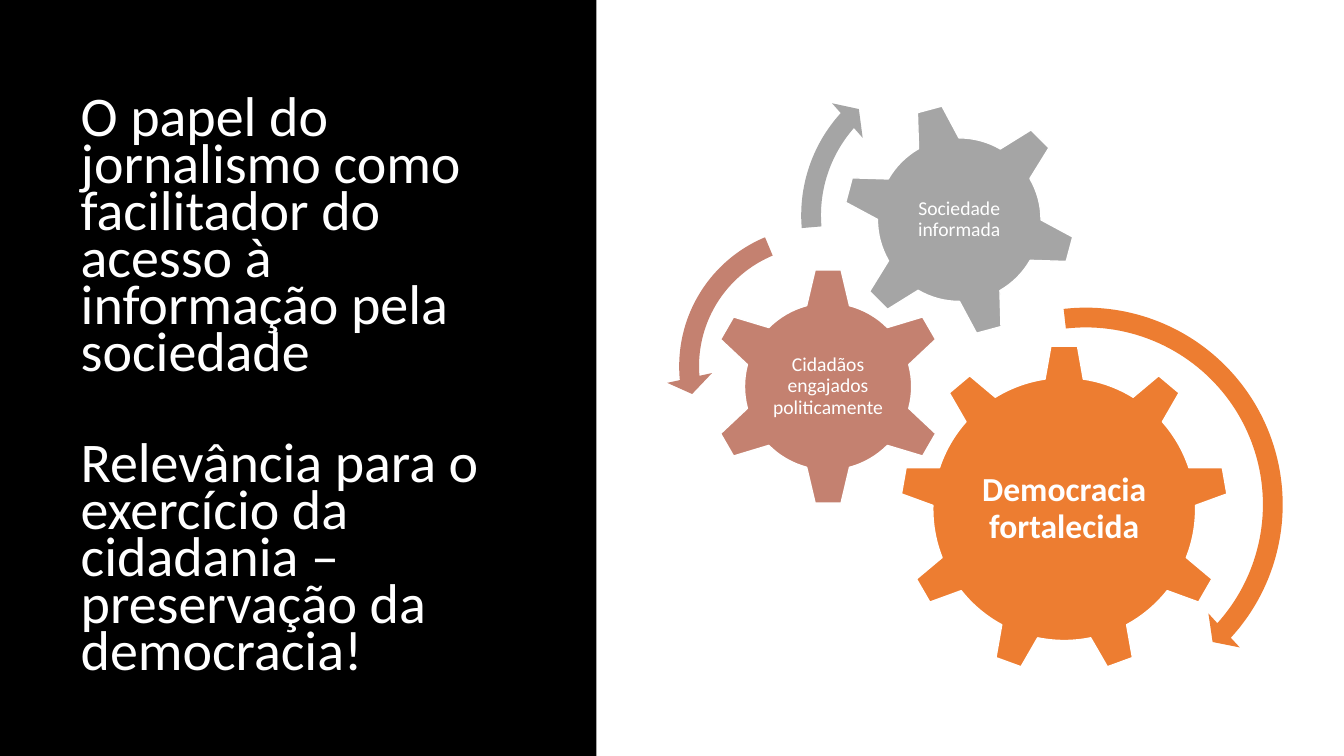
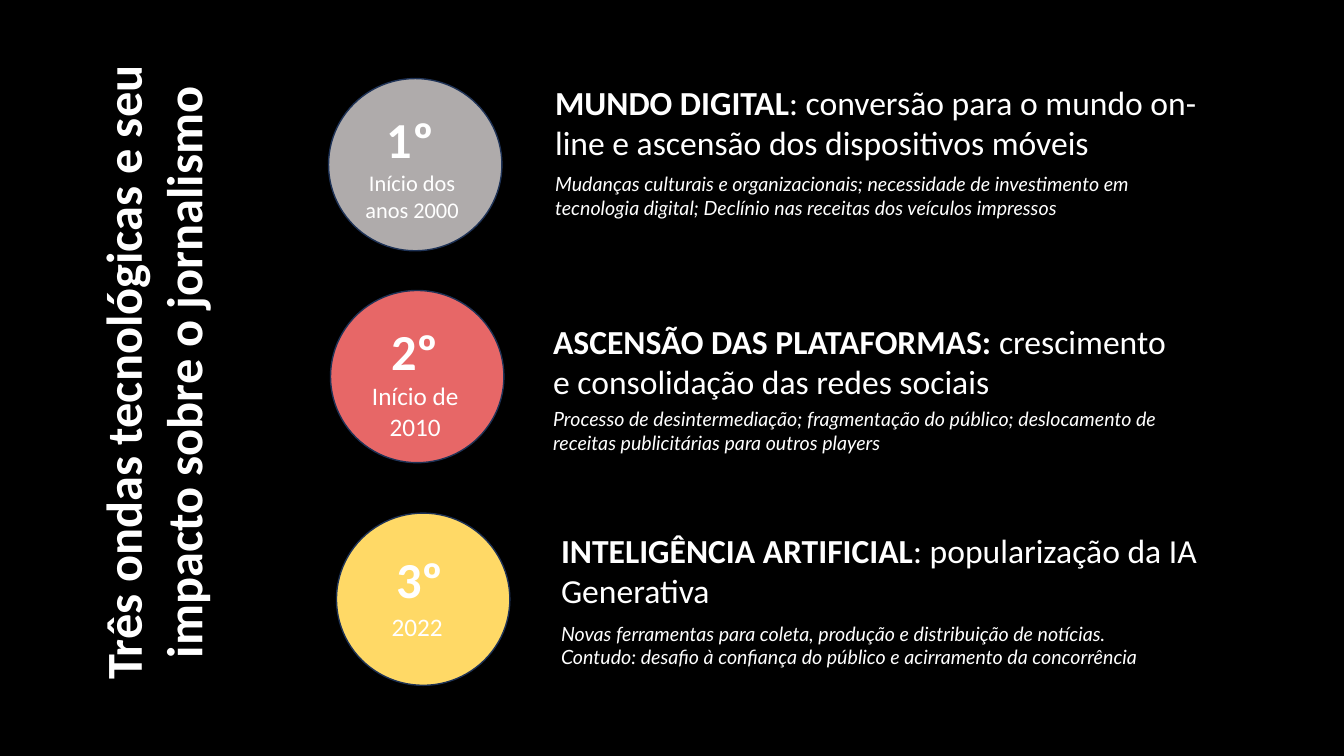
"""Build two slides on journalism, democracy and the waves of technology."""
from dataclasses import dataclass

from pptx import Presentation
from pptx.dml.color import RGBColor
from pptx.enum.shapes import MSO_SHAPE
from pptx.enum.text import MSO_ANCHOR, MSO_AUTO_SIZE, PP_ALIGN
from pptx.util import Cm, Pt

RECTANGLE, ELLIPSE = MSO_SHAPE.RECTANGLE, MSO_SHAPE.OVAL
GEAR_6, GEAR_9 = MSO_SHAPE.GEAR_6, MSO_SHAPE.GEAR_9
ARROW, LEFT_ARROW = MSO_SHAPE.CIRCULAR_ARROW, MSO_SHAPE.LEFT_CIRCULAR_ARROW
TOP, MIDDLE = MSO_ANCHOR.TOP, MSO_ANCHOR.MIDDLE
LEFT, CENTER = PP_ALIGN.LEFT, PP_ALIGN.CENTER
NO_AUTOFIT = MSO_AUTO_SIZE.NONE
TITLE_ONLY = 5


@dataclass(frozen=True)
class Theme:
    """Colours, fonts and type sizes in points."""
    black: str = "000000"
    white: str = "FFFFFF"
    orange: str = "ED7D31"
    clay: str = "C48170"
    grey: str = "A5A5A5"
    silver: str = "AFABAB"
    coral: str = "E76767"
    yellow: str = "FFD966"
    navy: str = "1E3256"
    font: str = "Calibri"
    detail_font: str = "Lato"
    statement: int = 40
    display: int = 36
    heading: int = 24
    period: int = 18
    small_period: int = 16
    small: int = 14


THEME = Theme()


@dataclass(frozen=True)
class Area:
    """A rectangle in centimetres."""
    left: float
    top: float
    width: float
    height: float

    def lengths(self) -> tuple:
        """Return the four lengths for python-pptx."""
        return Cm(self.left), Cm(self.top), Cm(self.width), Cm(self.height)

    def centred(self, side: float) -> "Area":
        """Return a square with the same centre."""
        return Area(self.left + (self.width - side) / 2,
                    self.top + (self.height - side) / 2, side, side)


@dataclass(frozen=True)
class Style:
    """How a paragraph is set."""
    size: int
    align: PP_ALIGN = LEFT
    bold: bool = False
    italic: bool = False
    font: str = THEME.font


@dataclass(frozen=True)
class Gear:
    """A labelled gear."""
    label: str
    kind: MSO_SHAPE
    left: float
    top: float
    side: float
    label_side: float
    colour: str
    style: Style
    rotation: float = 0


@dataclass(frozen=True)
class Turn:
    """A circular arrow: thicknesses in percent, angles in degrees."""
    kind: MSO_SHAPE
    left: float
    top: float
    side: float
    colour: str
    band: float
    head_angle: float
    end_angle: float
    start_angle: float
    head: float


@dataclass(frozen=True)
class Wave:
    """One technological wave and the places of its parts."""
    number: str
    number_at: tuple[float, float]
    period: str
    period_at: tuple[float, float]
    period_size: int
    circle_at: tuple[float, float]
    colour: str
    name: str
    summary: str
    text_left: float
    heading_top: float
    heading_width: float
    detail: str
    detail_top: float


STATEMENT = Style(THEME.statement)
SIDE_TITLE = Style(THEME.display, CENTER, bold=True)
NUMBER = Style(THEME.display, CENTER, bold=True)
HEADING = Style(THEME.heading)
DETAIL = Style(THEME.small, italic=True, font=THEME.detail_font)
SMALL_LABEL = Style(THEME.small, CENTER)
MAIN_LABEL = Style(THEME.heading, CENTER, bold=True)

STATEMENTS = [
    "O papel do jornalismo como facilitador do acesso à informação pela sociedade",
    "Relevância para o exercício da cidadania – preservação da democracia!",
]
GEARS = [
    Gear("Democracia fortalecida", GEAR_9, 22.68, 8.69, 8.28, 4.95, THEME.orange, MAIN_LABEL),
    Gear("Cidadãos engajados politicamente", GEAR_6, 17.86, 6.73, 6.02, 3, THEME.clay, SMALL_LABEL),
    Gear("Sociedade informada", GEAR_6, 21.23, 2.59, 5.89, 3.3, THEME.grey, SMALL_LABEL, 345),
]
TURNS = [
    Turn(ARROW, 22.07, 7.42, 10.59, THEME.orange, 4.7, 4.98, 42.32, 263.54, 5.5),
    Turn(LEFT_ARROW, 16.79, 5.38, 7.7, THEME.clay, 6.5, 7.17, 174.82, 247.3, 7.5),
    Turn(ARROW, 19.86, 1.27, 8.31, THEME.grey, 6, 6.57, 221.9, 175.14, 7),
]
WAVES = [
    Wave("1º", (9.02, 2.59), "Início dos anos 2000", (8.81, 4.14), THEME.small_period,
         (8.28, 1.98), THEME.silver, "MUNDO DIGITAL",
         ": conversão para o mundo on-line e ascensão dos dispositivos móveis",
         13.74, 1.93, 17.02,
         "Mudanças culturais e organizacionais; necessidade de investimento em tecnologia "
         "digital; Declínio nas receitas dos veículos impressos", 4.22),
    Wave("2º", (9.14, 7.95), "Início de 2010", (8.89, 9.47), THEME.period,
         (8.33, 7.32), THEME.coral, "ASCENSÃO DAS PLATAFORMAS: ",
         "crescimento e consolidação das redes sociais",
         13.69, 7.95, 16.28,
         "Processo de desintermediação; fragmentação do público; deslocamento de receitas "
         "publicitárias para outros players", 10.13),
    Wave("3º", (9.27, 13.69), "2022", (8.94, 15.29), THEME.period,
         (8.48, 12.93), THEME.yellow, "INTELIGÊNCIA ARTIFICIAL",
         ": popularização da IA Generativa",
         13.89, 13.23, 17.02,
         "Novas ferramentas para coleta, produção e distribuição de notícias. Contudo: desafio "
         "à confiança do público e acirramento da concorrência", 15.54),
]


def rgb(colour: str) -> RGBColor:
    """Turn a hex string into a colour."""
    return RGBColor.from_string(colour)


def format_paragraph(para, style: Style) -> None:
    """Apply a style to a paragraph."""
    para.alignment = style.align
    font = para.font
    font.name, font.size = style.font, Pt(style.size)
    font.bold, font.italic = style.bold, style.italic
    font.color.rgb = rgb(THEME.white)


def add_shape(page, kind: MSO_SHAPE, area: Area, colour: str, line: str | None = None):
    """Add a flat filled shape, with a one-point outline if a colour is given."""
    shape = page.shapes.add_shape(kind, *area.lengths())
    shape.shadow.inherit = False
    shape.fill.solid()
    shape.fill.fore_color.rgb = rgb(colour)
    if line:
        shape.line.color.rgb = rgb(line)
        shape.line.width = Pt(1)
    else:
        shape.line.fill.background()
    return shape


def add_text(page, area: Area, text: str, style: Style):
    """Add a wrapping text box with one paragraph."""
    box = page.shapes.add_textbox(*area.lengths())
    box.text_frame.word_wrap = True
    para = box.text_frame.paragraphs[0]
    para.text = text
    format_paragraph(para, style)
    return box


def add_page(deck, title_area: Area, paragraphs: list[str], style: Style):
    """Add a slide and fill its title placeholder."""
    page = deck.slides.add_slide(deck.slide_layouts[TITLE_ONLY])
    title = page.shapes.title
    title.left, title.top, title.width, title.height = title_area.lengths()
    frame = title.text_frame
    frame.text = "\n".join(paragraphs)
    frame.word_wrap, frame.auto_size, frame.vertical_anchor = True, NO_AUTOFIT, TOP
    for para in frame.paragraphs:
        format_paragraph(para, style)
    return page


def draw_gear(page, gear: Gear) -> None:
    """Draw a gear and its centred label."""
    area = Area(gear.left, gear.top, gear.side, gear.side)
    add_shape(page, gear.kind, area, gear.colour, THEME.white).rotation = gear.rotation
    frame = add_text(page, area.centred(gear.label_side), gear.label, gear.style).text_frame
    frame.vertical_anchor = MIDDLE
    frame.margin_left = frame.margin_right = frame.margin_top = frame.margin_bottom = Cm(0.05)
    frame.paragraphs[0].line_spacing = 0.9


def draw_turn(page, turn: Turn) -> None:
    """Draw a circular arrow."""
    shape = add_shape(page, turn.kind, Area(turn.left, turn.top, turn.side, turn.side), turn.colour)
    angles = [angle * 0.6 for angle in (turn.head_angle, turn.end_angle, turn.start_angle)]
    for index, value in enumerate([turn.band / 100, *angles, turn.head / 100]):
        shape.adjustments[index] = value


def draw_wave(page, wave: Wave) -> None:
    """Draw a wave's circle, heading and detail."""
    add_shape(page, ELLIPSE, Area(*wave.circle_at, 4.37, 4.34), wave.colour, THEME.navy)
    add_text(page, Area(*wave.number_at, 2.64, 1.8), wave.number, NUMBER)
    add_text(page, Area(*wave.period_at, 3.15, 1.8), wave.period, Style(wave.period_size, CENTER))
    heading_area = Area(wave.text_left, wave.heading_top, wave.heading_width, 2.31)
    para = add_text(page, heading_area, wave.name, HEADING).text_frame.paragraphs[0]
    para.runs[0].font.bold = True
    para.add_run().text = wave.summary
    add_text(page, Area(wave.text_left, wave.detail_top, 15.8, 1.45), wave.detail, DETAIL)


def build_role_slide(deck) -> None:
    """Build the slide on the role of journalism."""
    page = add_page(deck, Area(1.78, 2.36, 11.48, 16.15), STATEMENTS, STATEMENT)
    first, second = page.shapes.title.text_frame.paragraphs
    first.line_spacing = second.line_spacing = 0.7
    second.space_before = Pt(46)
    add_shape(page, RECTANGLE, Area(15.03, 0, 18.84, 19.05), THEME.white)
    for gear in GEARS:
        draw_gear(page, gear)
    for turn in TURNS:
        draw_turn(page, turn)


def build_waves_slide(deck) -> None:
    """Build the slide on the three technological waves."""
    title = "Três ondas tecnológicas e seu impacto sobre o jornalismo"
    page = add_page(deck, Area(-4.78, 7.72, 17.25, 3.33), [title], SIDE_TITLE)
    page.shapes.title.rotation = 270
    for wave in WAVES:
        draw_wave(page, wave)


def main() -> None:
    """Build and save the deck."""
    deck = Presentation()
    deck.slide_width, deck.slide_height = Cm(33.87), Cm(19.05)
    background = deck.slide_master.background.fill
    background.solid()
    background.fore_color.rgb = rgb(THEME.black)
    build_role_slide(deck)
    build_waves_slide(deck)
    deck.save("out.pptx")


if __name__ == "__main__":
    main()
